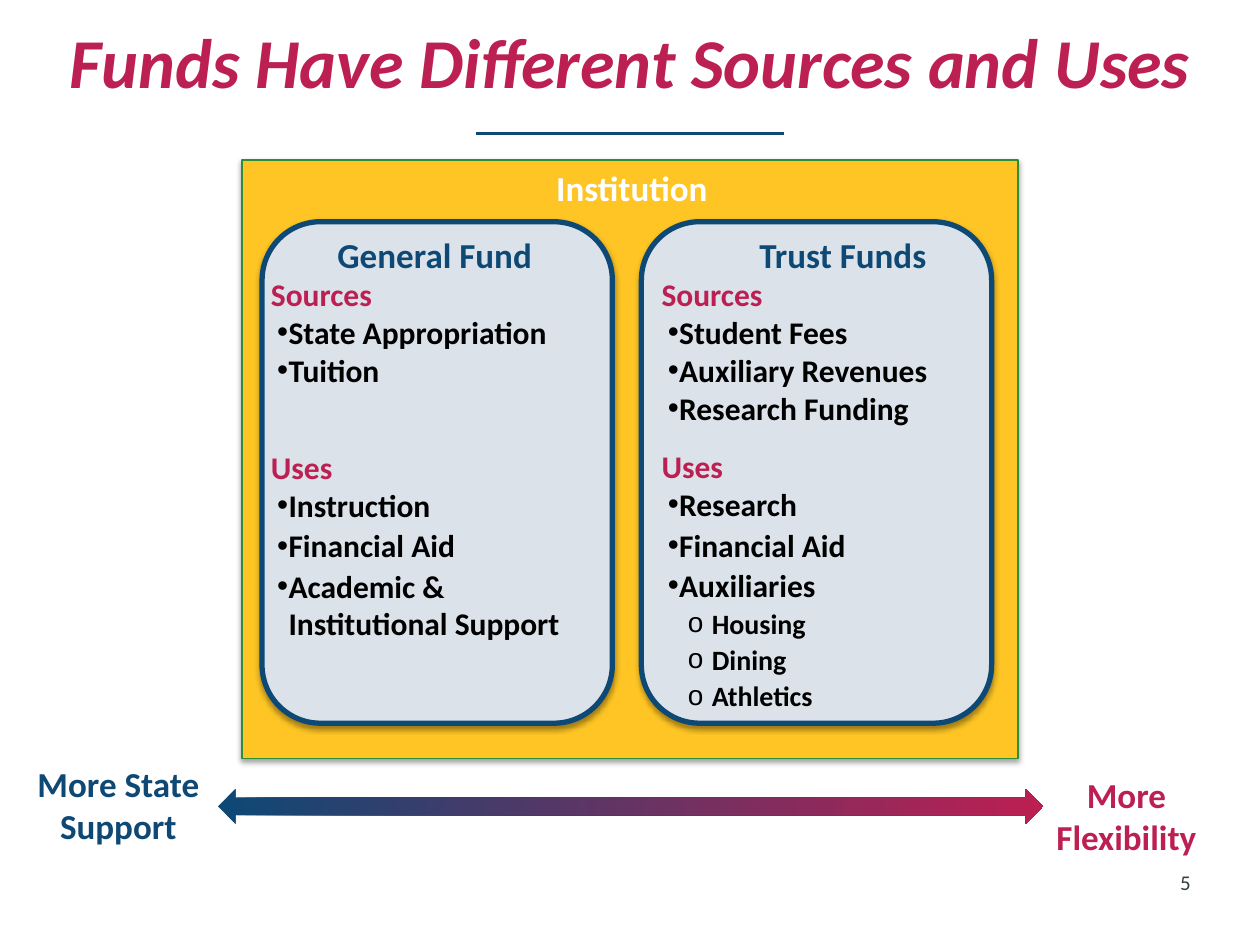
import pptx
import pptx.util
import pptx.dml.color
import pptx.enum.shapes
import pptx.enum.text
import pptx.oxml.ns
from dataclasses import dataclass
from lxml import etree

Pt = pptx.util.Pt
Shape = pptx.enum.shapes.MSO_SHAPE
Align = pptx.enum.text.PP_ALIGN
Anchor = pptx.enum.text.MSO_ANCHOR
Fit = pptx.enum.text.MSO_AUTO_SIZE
qn = pptx.oxml.ns.qn


@dataclass(frozen=True)
class Theme:
    font: str = "Calibri"
    navy: str = "0E4875"
    red: str = "BC1F52"
    gold: str = "FEC524"
    green: str = "308D37"
    pale: str = "DBE2E9"
    white: str = "FFFFFF"
    black: str = "000000"
    gray: str = "364044"
    title: int = 40
    head: int = 20
    body: int = 18
    sub: int = 16
    note: int = 12


def rgb(code):
    return pptx.dml.color.RGBColor.from_string(code)


def cast(parent, blur=3.1, dist=1.7, alpha=37):
    """Put a soft downward shadow in an effect list."""
    shade = etree.SubElement(parent, qn("a:outerShdw"), blurRad=str(Pt(blur)),
                             dist=str(Pt(dist)), dir="5400000", rotWithShape="0")
    tint = etree.SubElement(shade, qn("a:srgbClr"), val=Theme.black)
    etree.SubElement(tint, qn("a:alpha"), val=str(alpha * 1000))


def write(para, text, size=Theme.body, color=Theme.black, bold=True, italic=False,
          align=Align.LEFT, before=0, lines=1.0, level=0, bullet=None,
          indent=(0, 0), glow=False):
    """Fill one paragraph; indent is (left, first line) in inches."""
    para.level, para.alignment = level, align
    para.space_before, para.line_spacing = Pt(before), lines
    props = para._p.get_or_add_pPr()
    for name, value in zip(("marL", "indent"), indent):
        props.set(name, str(pptx.util.Inches(value)))
    if bullet:
        etree.SubElement(props, qn("a:buChar"), char=bullet)
    else:
        etree.SubElement(props, qn("a:buNone"))
    run = para.add_run()
    run.text = text
    font = run.font
    font.name, font.size, font.bold, font.italic = Theme.font, Pt(size), bold, italic
    font.color.rgb = rgb(color)
    if glow:
        effect = etree.Element(qn("a:effectLst"))
        cast(effect, dist=2, alpha=45)
        run._r.rPr.find(qn("a:solidFill")).addnext(effect)


class Deck:
    COLS, ROWS = 100, 75

    def __init__(self):
        self.file = pptx.Presentation()
        self.file.slide_width = pptx.util.Inches(10)
        self.file.slide_height = pptx.util.Inches(7.5)
        self.slide = self.file.slides.add_slide(self.file.slide_layouts[3])
        self.shapes = self.slide.shapes

    def grid(self, *cells):
        """Turn column, row pairs into lengths."""
        units = (self.file.slide_width / self.COLS, self.file.slide_height / self.ROWS)
        return [round(cell * units[i % 2]) for i, cell in enumerate(cells)]

    def hold(self, index, cells, anchor=Anchor.TOP):
        """Move a placeholder and bring it to the front."""
        spot = self.slide.placeholders[index]
        spot.left, spot.top, spot.width, spot.height = self.grid(*cells)
        self.shapes._spTree.append(spot._element)
        frame = spot.text_frame
        frame.auto_size, frame.vertical_anchor = Fit.NONE, anchor
        return frame

    def title(self, text, cells):
        frame = self.hold(0, cells, Anchor.MIDDLE)
        write(frame.paragraphs[0], text, size=Theme.title, color=Theme.red,
              italic=True, align=Align.CENTER, lines=0.9)

    def list(self, index, cells, items):
        frame = self.hold(index, cells)
        for i, (text, form) in enumerate(items):
            para = frame.add_paragraph() if i else frame.paragraphs[0]
            write(para, text, **form)

    def label(self, text, cells, inset=True, **form):
        frame = self.shapes.add_textbox(*self.grid(*cells)).text_frame
        frame.word_wrap = inset
        if not inset:
            frame.margin_left = frame.margin_right = 0
            frame.margin_top = frame.margin_bottom = 0
        write(frame.paragraphs[0], text, **form)

    def panel(self, kind, cells, fill, line, width):
        box = self.shapes.add_shape(kind, *self.grid(*cells))
        box.fill.solid()
        box.fill.fore_color.rgb = rgb(fill)
        box.line.color.rgb, box.line.width = rgb(line), Pt(width)
        box.shadow.inherit = False
        cast(box._element.spPr.find(qn("a:effectLst")))

    def arrow(self, cells, *colors):
        bar = self.shapes.add_shape(Shape.LEFT_RIGHT_ARROW, *self.grid(*cells))
        bar.shadow.inherit = False
        bar.line.fill.background()
        bar.fill.gradient()
        bar.fill.gradient_angle = 0
        for stop, color in zip(bar.fill.gradient_stops, colors):
            stop.color.rgb = rgb(color)

    def rule(self, cells, color, width):
        line = self.shapes.add_connector(pptx.enum.shapes.MSO_CONNECTOR.STRAIGHT,
                                         *self.grid(*cells))
        line.line.color.rgb, line.line.width = rgb(color), Pt(width)
        etree.SubElement(line._element.spPr, qn("a:effectLst"))


def fund(name, gains, costs, gap, subs=()):
    """List the paragraphs of one fund; gap is the space above Uses."""
    point = dict(bullet="•", indent=(0.14, -0.09))
    deep = dict(bullet="o", indent=(0.4, -0.19), level=1, size=Theme.sub, before=1.5)
    return [
        (name, dict(size=Theme.head, color=Theme.navy, align=Align.CENTER)),
        ("Sources", dict(color=Theme.red)),
        *[(text, point) for text in gains],
        ("Uses", dict(color=Theme.red, before=gap)),
        *[(text, dict(point, before=1.5 if i else 0)) for i, text in enumerate(costs)],
        *[(text, deep) for text in subs],
    ]


def main():
    deck = Deck()
    mid = dict(size=Theme.head, align=Align.CENTER)

    # Heading
    deck.title("Funds Have Different Sources and Uses", (0, 0.4, 100, 9.6))
    deck.rule((37.8, 10.6, 62.2, 10.6), Theme.navy, 2)

    # Institution and its two panels
    deck.panel(Shape.RECTANGLE, (19.2, 12.7, 61.6, 47.5), Theme.gold, Theme.green, 0.75)
    deck.label("Institution", (35.2, 12.7, 29.9, 4.4), color=Theme.white, glow=True, **mid)
    for i in range(2):
        deck.panel(Shape.ROUNDED_RECTANGLE, (20.8 + 30.1 * i, 17.6, 27.8, 39.8),
                   Theme.pale, Theme.navy, 3)

    # Fund lists
    deck.list(1, (20.5, 18, 28, 37.2), fund(
        "General Fund", ["State Appropriation", "Tuition"],
        ["Instruction", "Financial Aid", "Academic & Institutional Support"], gap=34))
    deck.list(2, (51.5, 18, 30.8, 42.8), fund(
        "Trust Funds", ["Student Fees", "Auxiliary Revenues", "Research Funding"],
        ["Research", "Financial Aid", "Auxiliaries"], gap=12,
        subs=["Housing", "Dining", "Athletics"]))

    # Scale from state support to flexibility
    deck.arrow((17.3, 62.6, 65.5, 2.8), Theme.navy, Theme.red)
    deck.label("More State Support", (1.4, 60, 16, 7.7), color=Theme.navy, **mid)
    deck.label("More Flexibility", (82.3, 60.9, 14.2, 7.7), color=Theme.red, **mid)

    # Page number
    deck.label("5", (90, 69, 4.5, 2.2), inset=False, size=Theme.note,
               color=Theme.gray, bold=False, align=Align.RIGHT)

    deck.file.save("out.pptx")


if __name__ == "__main__":
    main()
